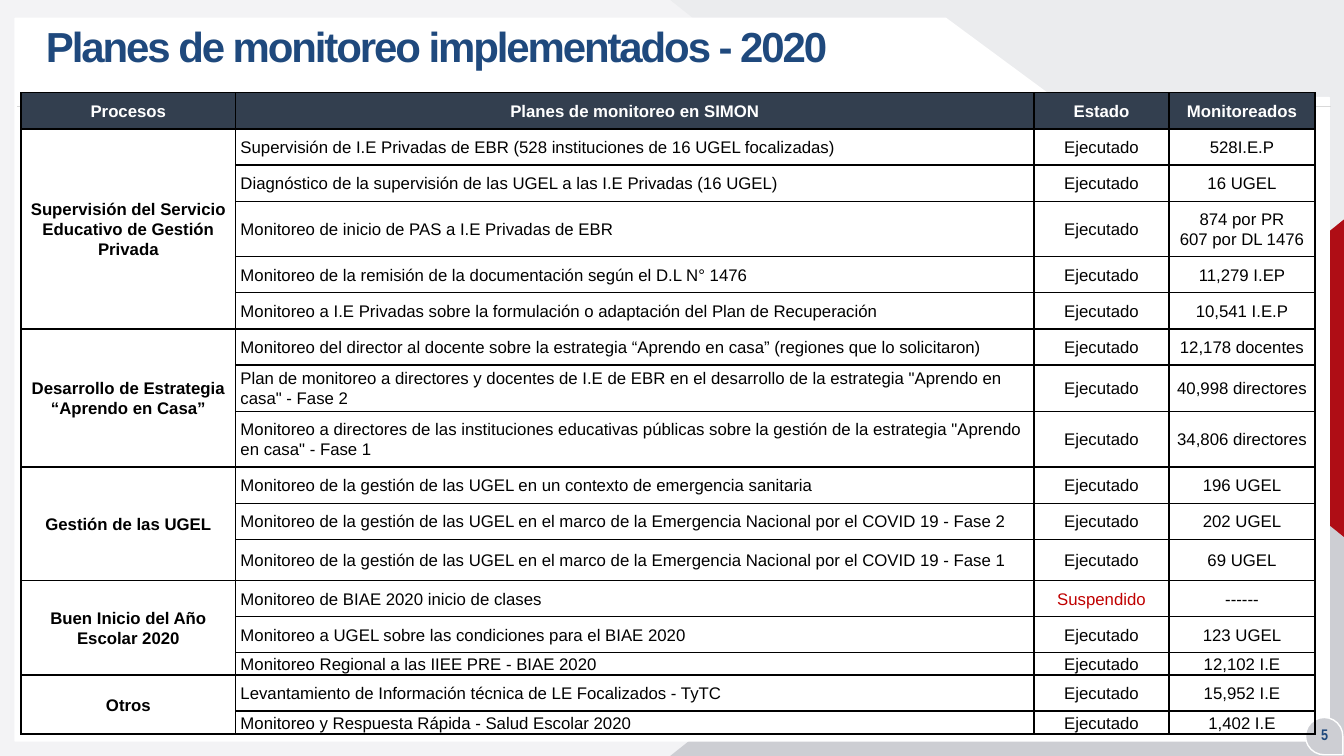
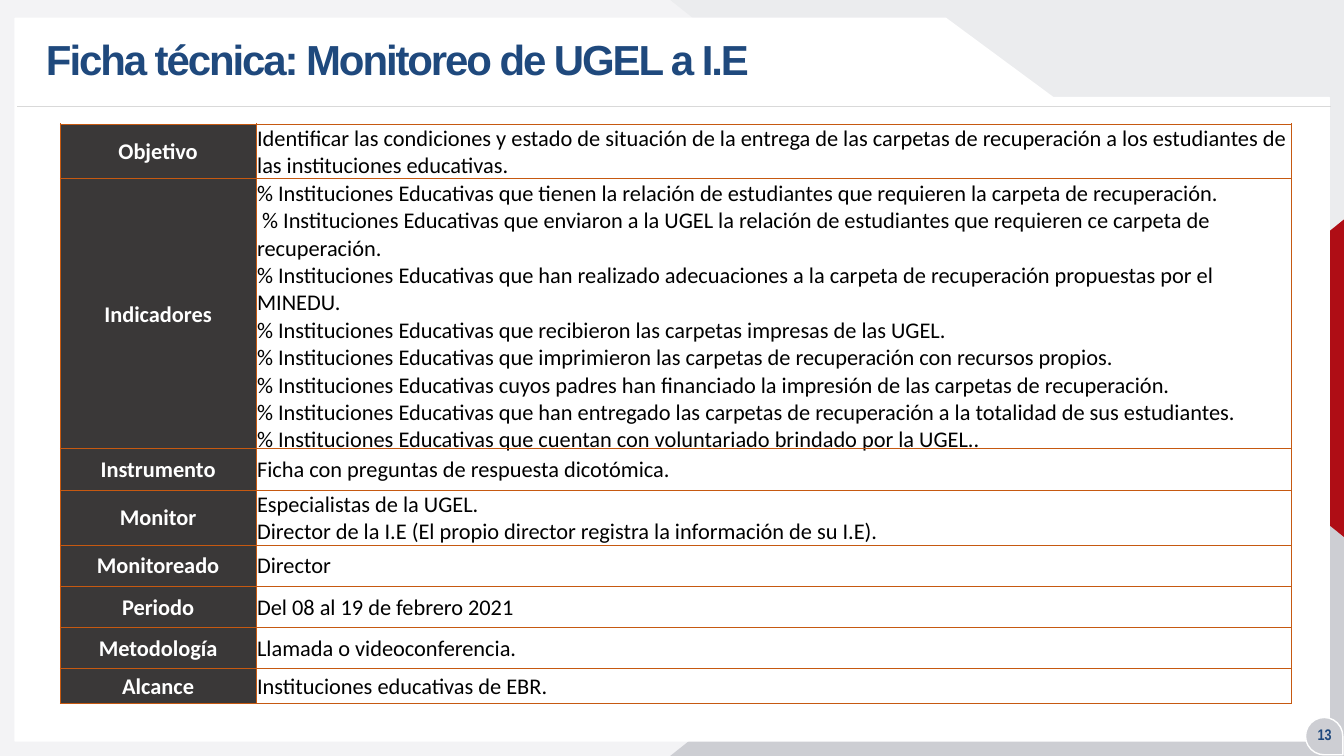
from lxml import etree
from pptx import Presentation
from pptx.dml.color import RGBColor
from pptx.enum import shapes, text
from pptx.oxml import ns
from pptx.util import Cm, Pt

WHITE = RGBColor(0xFF, 0xFF, 0xFF)
BLACK = RGBColor(0, 0, 0)
NAVY = RGBColor(0x1F, 0x49, 0x7D)
SLATE = RGBColor(0x33, 0x3F, 0x4F)
CHARCOAL = RGBColor(0x3A, 0x38, 0x38)
ORANGE = RGBColor(0xC6, 0x59, 0x11)
CRIMSON = RGBColor(0xC0, 0, 0)
RED = RGBColor(0xAF, 0x0D, 0x15)
MIST = RGBColor(0xF3, 0xF3, 0xF5)
PALE = RGBColor(0xEB, 0xEC, 0xEE)
SILVER = RGBColor(0xCD, 0xCE, 0xD3)
RULE = RGBColor(0xD9, 0xD9, 0xD9)

DONE, SUSPENDED = "Ejecutado", "Suspendido"
ROW = 0.91

PLANS_HEADER = ["Procesos", "Planes de monitoreo en SIMON", "Estado", "Monitoreados"]
PLANS = [
    ("Supervisión del Servicio Educativo de Gestión Privada", [
        ("Supervisión de I.E Privadas de EBR (528 instituciones de 16 UGEL focalizadas)",
         DONE, "528I.E.P", ROW),
        ("Diagnóstico de la supervisión de las UGEL a las I.E Privadas (16 UGEL)",
         DONE, "16 UGEL", ROW),
        ("Monitoreo de inicio de PAS a I.E Privadas de EBR",
         DONE, "874 por PR\n607 por DL 1476", 1.4),
        ("Monitoreo de la remisión de la documentación según el D.L N° 1476",
         DONE, "11,279 I.EP", ROW),
        ("Monitoreo a I.E Privadas sobre la formulación o adaptación del Plan de Recuperación",
         DONE, "10,541 I.E.P", ROW),
    ]),
    ("Desarrollo de Estrategia “Aprendo en Casa”", [
        ("Monitoreo del director al docente sobre la estrategia “Aprendo en casa” "
         "(regiones que lo solicitaron)", DONE, "12,178 docentes", ROW),
        ("Plan de monitoreo a directores y docentes de I.E de EBR en el desarrollo de la "
         'estrategia "Aprendo en casa" - Fase 2', DONE, "40,998 directores", 1.17),
        ("Monitoreo a directores de las instituciones educativas públicas sobre la gestión "
         'de la estrategia "Aprendo en casa" - Fase 1', DONE, "34,806 directores", 1.4),
    ]),
    ("Gestión de las UGEL", [
        ("Monitoreo de la gestión de las UGEL en un contexto de emergencia sanitaria",
         DONE, "196 UGEL", ROW),
        ("Monitoreo de la gestión de las UGEL en el marco de la Emergencia Nacional "
         "por el COVID 19 - Fase 2", DONE, "202 UGEL", ROW),
        ("Monitoreo de la gestión de las UGEL en el marco de la Emergencia Nacional "
         "por el COVID 19 - Fase 1", DONE, "69 UGEL", 1.04),
    ]),
    ("Buen Inicio del Año Escolar 2020", [
        ("Monitoreo de BIAE 2020 inicio de clases", SUSPENDED, "------", ROW),
        ("Monitoreo a UGEL sobre las condiciones para el BIAE 2020", DONE, "123 UGEL", ROW),
        ("Monitoreo Regional a las IIEE PRE - BIAE 2020", DONE, "12,102 I.E", 0.56),
    ]),
    ("Otros", [
        ("Levantamiento de Información técnica de LE Focalizados - TyTC",
         DONE, "15,952 I.E", ROW),
        ("Monitoreo y Respuesta Rápida - Salud Escolar 2020", DONE, "1,402 I.E", 0.58),
    ]),
]

SHEET = [
    ("Objetivo", "Identificar las condiciones y estado de situación de la entrega de las carpetas "
     "de recuperación a los estudiantes de las instituciones educativas.", 1.07),
    ("Indicadores", "\n".join([
        "% Instituciones Educativas que tienen la relación de estudiantes que requieren "
        "la carpeta de recuperación.",
        " % Instituciones Educativas que enviaron a la UGEL la relación de estudiantes que "
        "requieren ce carpeta de recuperación.",
        "% Instituciones Educativas que han realizado adecuaciones a la carpeta de "
        "recuperación propuestas por el MINEDU.",
        "% Instituciones Educativas que recibieron las carpetas impresas de las UGEL.",
        "% Instituciones Educativas que imprimieron las carpetas de recuperación con "
        "recursos propios.",
        "% Instituciones Educativas cuyos padres han financiado la impresión de las "
        "carpetas de recuperación.",
        "% Instituciones Educativas que han entregado las carpetas de recuperación a la "
        "totalidad de sus estudiantes.",
        "% Instituciones Educativas que cuentan con voluntariado brindado por la UGEL..",
    ]), 6.4),
    ("Instrumento", "Ficha con preguntas de respuesta dicotómica.", 1.04),
    ("Monitor", "Especialistas de la UGEL.\n"
     "Director de la I.E (El propio director registra la información de su I.E).", 1.04),
    ("Monitoreado", "Director", 1.04),
    ("Periodo", "Del 08 al 19 de febrero 2021", 1.04),
    ("Metodología", "Llamada o videoconferencia.", 1.04),
    ("Alcance", "Instituciones educativas de EBR.", 0.86),
]

PAGE_W, PAGE_H = 33.87, 19.05
PANEL = [(0.38, 0.46), (23.83, 0.46), (26.54, 2.46), (33.5, 2.46), (33.5, 18.67), (0.38, 18.67)]
KIND = shapes.MSO_SHAPE
BACKDROP = [
    (KIND.RECTANGLE, (0, 0, PAGE_W, PAGE_H), MIST, None, 0, False),
    (KIND.ISOSCELES_TRIANGLE, (16.89, 0, 16.98, 13.49), PALE, 1, 0, True),
    (KIND.ISOSCELES_TRIANGLE, (16.89, 5.56, 16.98, 13.49), SILVER, 1, 0, False),
    (KIND.ISOSCELES_TRIANGLE, (27.38, 7.04, 8, 4.98), RED, 0.5, 270, False),
]
BADGE = (KIND.TEAR, (32.9, 18.08, 0.94, 0.94), SILVER, None, 90, False)
CENTER, LEFT = text.PP_ALIGN.CENTER, text.PP_ALIGN.LEFT
MIDDLE, BOTTOM = text.MSO_ANCHOR.MIDDLE, text.MSO_ANCHOR.BOTTOM


def paint(shape, fill, line=None):
    shape.shadow.inherit = False
    shape.fill.solid()
    shape.fill.fore_color.rgb = fill
    if line is None:
        shape.line.fill.background()
    else:
        shape.line.color.rgb = line
        shape.line.width = Pt(1)


def add_preset(slide, part, line=None):
    kind, box, fill, apex, rotation, flipped = part
    shape = slide.shapes.add_shape(kind, *map(Cm, box))
    if apex is not None:
        shape.adjustments[0] = apex
    shape.rotation = rotation
    if flipped:
        shape._element.spPr.get_or_add_xfrm().set("flipV", "1")
    paint(shape, fill, line)


def write(frame, words, font, size, color, bold, align=LEFT, spacing=None, tracking=None):
    for index, line in enumerate(words.split("\n")):
        paragraph = frame.add_paragraph() if index else frame.paragraphs[0]
        paragraph.alignment = align
        if spacing:
            paragraph.line_spacing = spacing
        run = paragraph.add_run()
        run.text = line
        run.font.name, run.font.size, run.font.bold = font, Pt(size), bold
        run.font.color.rgb = color
        if tracking:
            run._r.get_or_add_rPr().set("spc", str(tracking))


def add_label(slide, box, inset, words, **style):
    frame = slide.shapes.add_textbox(*map(Cm, box)).text_frame
    frame.word_wrap = True
    frame.vertical_anchor = MIDDLE
    frame.margin_left = frame.margin_right = Cm(inset)
    frame.margin_top = frame.margin_bottom = 0
    write(frame, words, **style)


def add_framed_slide(deck, title, title_height, number):
    slide = deck.slides.add_slide(deck.slide_layouts[6])
    for part in BACKDROP:
        add_preset(slide, part)
    outline = slide.shapes.build_freeform(*map(Cm, PANEL[0]), scale=1.0)
    outline.add_line_segments([(Cm(x), Cm(y)) for x, y in PANEL[1:]], close=True)
    paint(outline.convert_to_shape(), WHITE, WHITE)
    rule = slide.shapes.add_connector(
        shapes.MSO_CONNECTOR.STRAIGHT, Cm(33.53), Cm(2.69), Cm(0.43), Cm(2.69))
    rule.line.color.rgb = RULE
    rule.line.width = Pt(0.5)
    etree.SubElement(rule._element.spPr, ns.qn("a:effectLst"))
    add_preset(slide, BADGE, WHITE)
    add_label(slide, (0.91, 0.56, 23.01, title_height), 0.25, title, font="Arial", size=30,
              color=NAVY, bold=True, spacing=0.9, tracking=-150)
    add_label(slide, (32.84, 18.26, 1.09, 0.51), 0, number, font="Arial Narrow", size=11,
              color=NAVY, bold=True, align=CENTER)
    return slide


def set_borders(cell, color, width):
    properties = cell._tc.get_or_add_tcPr()
    for index, side in enumerate(("lnL", "lnR", "lnT", "lnB")):
        line = etree.Element(ns.qn(f"a:{side}"), w=str(Pt(width)))
        solid = etree.SubElement(line, ns.qn("a:solidFill"))
        etree.SubElement(solid, ns.qn("a:srgbClr"), val=str(color))
        properties.insert(index, line)


def add_grid(slide, left, top, widths, heights, border, border_width, insets):
    table = slide.shapes.add_table(
        len(heights), len(widths), Cm(left), Cm(top), Cm(sum(widths)), Cm(sum(heights))).table
    table.first_row = table.horz_banding = False
    for column, width in zip(table.columns, widths):
        column.width = Cm(width)
    for row, height in zip(table.rows, heights):
        row.height = Cm(height)
    for cell in table.iter_cells():
        cell.fill.background()
        cell.vertical_anchor = MIDDLE
        cell.margin_left = cell.margin_right = Cm(insets[0])
        cell.margin_top, cell.margin_bottom = Cm(insets[1]), 0
        set_borders(cell, border, border_width)
    return table


def shade(cell, color):
    cell.fill.solid()
    cell.fill.fore_color.rgb = color


def add_plans(deck):
    slide = add_framed_slide(deck, "Planes de monitoreo implementados - 2020", 1.37, "5")
    heights = [ROW] + [plan[-1] for _, plans in PLANS for plan in plans]
    table = add_grid(slide, 0.53, 2.34, [5.41, 20.12, 3.4, 3.68], heights, BLACK, 1, (0.12, 0))
    style = dict(font="Arial", size=12, spacing=1.07)
    for column, heading in enumerate(PLANS_HEADER):
        cell = table.cell(0, column)
        shade(cell, SLATE)
        write(cell.text_frame, heading, color=WHITE, bold=True, align=CENTER, **style)
    row = 1
    for process, plans in PLANS:
        first = table.cell(row, 0)
        first.merge(table.cell(row + len(plans) - 1, 0))
        write(first.text_frame, process, color=BLACK, bold=True, align=CENTER, **style)
        for *values, _ in plans:
            for column, value in enumerate(values, 1):
                write(table.cell(row, column).text_frame, value,
                      color=CRIMSON if value == SUSPENDED else BLACK, bold=False,
                      align=LEFT if column == 1 else CENTER, **style)
            row += 1


def add_sheet(deck):
    slide = add_framed_slide(deck, "Ficha técnica: Monitoreo de UGEL a I.E", 2.01, "13")
    heights = [height for *_, height in SHEET]
    table = add_grid(slide, 1.52, 3.12, [4.93, 26.09], heights, ORANGE, 0.5, (0.03, 0.03))
    style = dict(font="Calibri", size=16)
    for row, (topic, detail, _) in enumerate(SHEET):
        heading, body = table.cell(row, 0), table.cell(row, 1)
        shade(heading, CHARCOAL)
        write(heading.text_frame, topic, color=WHITE, bold=True, align=CENTER, **style)
        write(body.text_frame, detail, color=BLACK, bold=False, **style)
    table.cell(0, 1).vertical_anchor = BOTTOM


def main():
    deck = Presentation()
    deck.slide_width, deck.slide_height = Cm(PAGE_W), Cm(PAGE_H)
    add_plans(deck)
    add_sheet(deck)
    deck.save("out.pptx")


if __name__ == "__main__":
    main()
